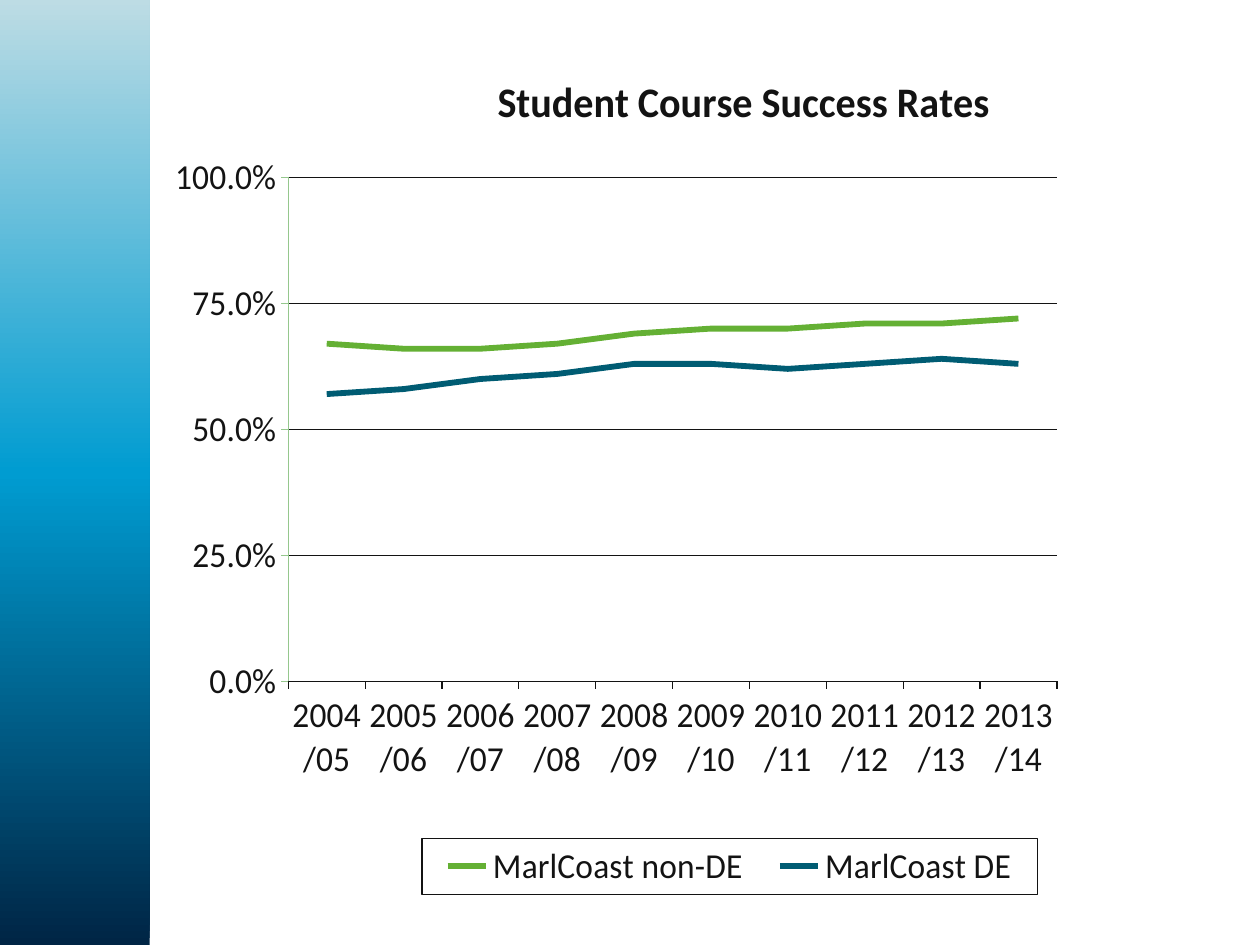
"""Build a slide with a line chart of student course success rates."""
from copy import deepcopy
from dataclasses import dataclass

from lxml.etree import _Element as Element
from pptx import Presentation
from pptx.chart.chart import Chart
from pptx.chart.data import CategoryChartData
from pptx.dml.color import RGBColor
from pptx.dml.line import LineFormat
from pptx.enum.chart import XL_CHART_TYPE as ChartType
from pptx.enum.chart import XL_LEGEND_POSITION as LegendPosition
from pptx.enum.chart import XL_TICK_MARK as TickMark
from pptx.enum.shapes import MSO_SHAPE as Shape
from pptx.oxml import parse_xml
from pptx.oxml.ns import nsdecls, qn
from pptx.slide import Slide
from pptx.util import Cm, Pt

COLORS = {
    "ink": "131313",
    "green": "64B034",
    "axis": "95C78D",
    "teal": "005C73",
    "navy": "002545",
    "blue": "009CD1",
    "mist": "BDDCE4",
}
FONT = "Calibri"
YEARS = [f"{year}/{(year + 1) % 100:02d}" for year in range(2004, 2014)]


@dataclass(frozen=True)
class RateSeries:
    name: str
    color: str
    values: tuple[float, ...]


@dataclass(frozen=True)
class Area:
    left: float
    top: float
    width: float | None = None
    height: float | None = None


RATES = (
    RateSeries("MarlCoast non-DE", "green",
               (0.67, 0.66, 0.66, 0.67, 0.69, 0.7, 0.7, 0.71, 0.71, 0.72)),
    RateSeries("MarlCoast DE", "teal",
               (0.57, 0.58, 0.6, 0.61, 0.63, 0.63, 0.62, 0.63, 0.64, 0.63)),
)


def rgb(name: str) -> RGBColor:
    return RGBColor.from_string(COLORS[name])


def style_line(line: LineFormat, color: str, width: float = 0.75) -> None:
    line.color.rgb = rgb(color)
    line.width = Pt(width)


def place(part: Element, index: int, area: Area, inner: bool = False) -> None:
    for old in part.findall(qn("c:layout")):
        part.remove(old)
    target = '<c:layoutTarget val="inner"/>' if inner else ""
    modes = '<c:xMode val="edge"/><c:yMode val="edge"/>'
    sizes = (("x", area.left), ("y", area.top), ("w", area.width), ("h", area.height))
    values = "".join(f'<c:{tag} val="{value}"/>' for tag, value in sizes if value is not None)
    part.insert(index, parse_xml(
        f'<c:layout {nsdecls("c")}><c:manualLayout>{target}{modes}{values}'
        "</c:manualLayout></c:layout>"))


def add_side_band(page: Slide) -> None:
    band = page.shapes.add_shape(Shape.RECTANGLE, 0, 0, Cm(3.02), Cm(19.05))
    band.shadow.inherit = False
    band.line.fill.background()
    band.fill.gradient()
    band.fill.gradient_angle = 90
    stop_list = band._element.spPr.find(qn("a:gradFill")).find(qn("a:gsLst"))
    stop_list.append(deepcopy(stop_list[-1]))
    stops = zip(band.fill.gradient_stops, ("navy", "blue", "mist"), (0, 0.5, 1))
    for stop, color, position in stops:
        stop.color.rgb = rgb(color)
        stop.position = position


def style_title(chart: Chart, text: str) -> None:
    para = chart.chart_title.text_frame.paragraphs[0]
    span = para.add_run()
    span.text = text
    span.font.name = FONT
    span.font.size = Pt(24)
    span.font.bold = True
    span.font.color.rgb = rgb("ink")
    place(chart.chart_title._element, 1, Area(0.257, 0.027))


def style_axes(chart: Chart) -> None:
    for axis, color in ((chart.category_axis, "ink"), (chart.value_axis, "axis")):
        axis.major_tick_mark = TickMark.OUTSIDE
        axis.minor_tick_mark = TickMark.NONE
        axis.tick_labels.font.size = Pt(20)
        style_line(axis.format.line, color)
    labels = chart.category_axis._element.find(qn("c:txPr")).find(qn("a:bodyPr"))
    labels.set("rot", "0")
    labels.set("vert", "horz")
    scale = chart.value_axis
    scale.minimum_scale = 0
    scale.maximum_scale = 1
    scale.major_unit = 0.25
    scale.tick_labels.number_format = "0.0%"
    scale.tick_labels.number_format_is_linked = False
    style_line(scale.major_gridlines.format.line, "ink")


def style_legend(chart: Chart) -> None:
    chart.has_legend = True
    legend = chart.legend
    legend.position = LegendPosition.BOTTOM
    legend.include_in_layout = False
    legend.font.size = Pt(20)
    place(legend._element, 1, Area(0.191, 0.924, 0.594, 0.065))
    legend._element.find(qn("c:txPr")).addprevious(parse_xml(
        f'<c:spPr {nsdecls("c", "a")}><a:noFill/><a:ln w="{Pt(0.75)}"><a:solidFill>'
        f'<a:srgbClr val="{COLORS["ink"]}"/></a:solidFill></a:ln></c:spPr>'))


def add_rate_chart(page: Slide) -> None:
    data = CategoryChartData(number_format="0.0%")
    data.categories = YEARS
    for rate in RATES:
        data.add_series(rate.name, rate.values)
    chart = page.shapes.add_chart(
        ChartType.LINE, Cm(3.53), Cm(0.85), Cm(21.87), Cm(17.37), data).chart
    chart.font.name = FONT
    chart.font.size = Pt(10)
    chart.font.color.rgb = rgb("ink")
    style_title(chart, "Student Course Success Rates")
    style_axes(chart)
    style_legend(chart)
    chart.plots[0].vary_by_categories = False
    for series, rate in zip(chart.plots[0].series, RATES):
        series.smooth = False
        style_line(series.format.line, rate.color, 3.5)
    plot_area = chart._chartSpace.chart.plotArea
    place(plot_area, 0, Area(0.062, 0.157, 0.742, 0.585), inner=True)


def main() -> None:
    deck = Presentation()
    deck.slide_width = Cm(25.4)
    deck.slide_height = Cm(19.05)
    page = deck.slides.add_slide(deck.slide_layouts[6])
    add_side_band(page)
    add_rate_chart(page)
    deck.save("out.pptx")


if __name__ == "__main__":
    main()
